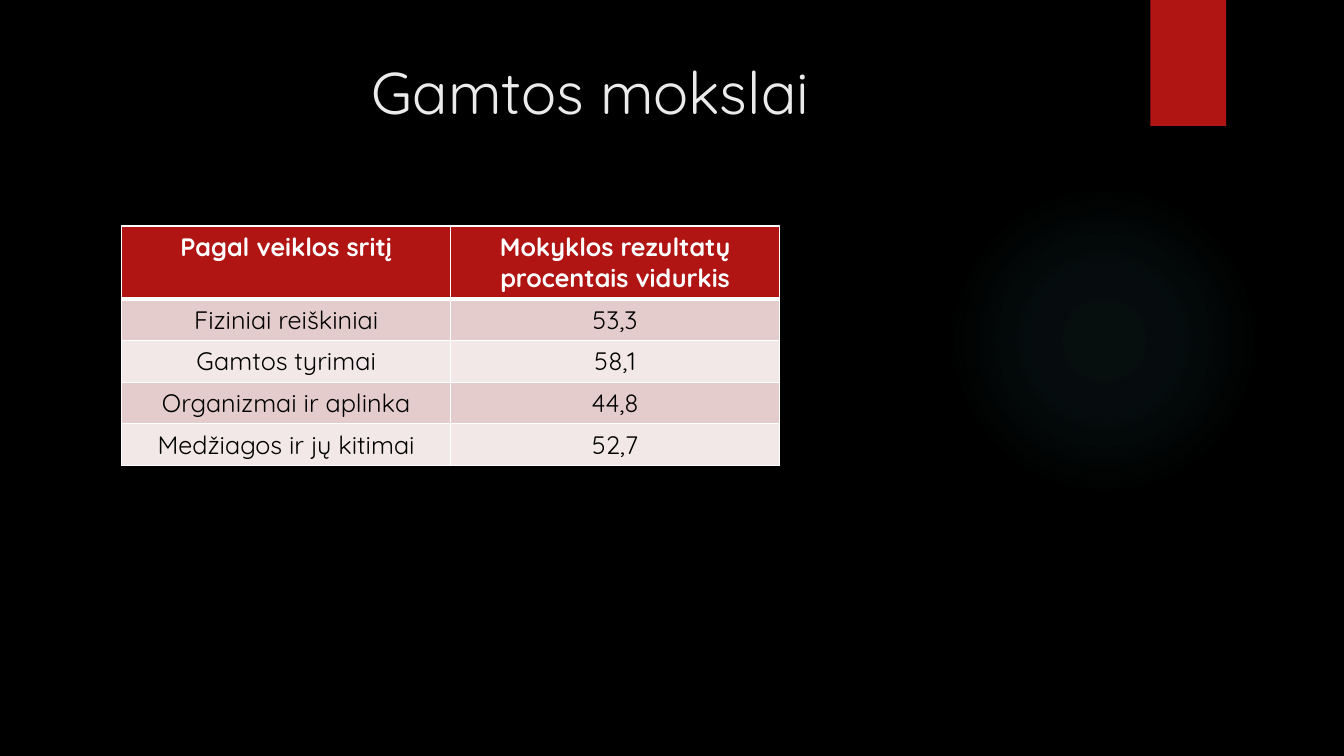
from lxml import etree
from pptx import Presentation
from pptx.dml.color import RGBColor
from pptx.enum.shapes import MSO_SHAPE
from pptx.enum.text import MSO_ANCHOR, PP_ALIGN
from pptx.oxml import parse_xml
from pptx.oxml.ns import qn
from pptx.util import Pt

CENTER = PP_ALIGN.CENTER
TOP = MSO_ANCHOR.TOP
OVAL = MSO_SHAPE.OVAL
RECTANGLE = MSO_SHAPE.RECTANGLE
FONT = "Quicksand"
RED = "B01513"
BANDS = ["E4CCCC", "F2E8E7"]
ROWS = [
    ("Pagal veiklos sritį", "Mokyklos rezultatų procentais vidurkis"),
    ("Fiziniai reiškiniai", "53,3"),
    ("Gamtos tyrimai", "58,1"),
    ("Organizmai ir aplinka", "44,8"),
    ("Medžiagos ir jų kitimai", "52,7"),
]


def rgb(color):
    return RGBColor.from_string(color)


def add_centred_run(tf, text, size, color, bold=False):
    p = tf.paragraphs[0]
    p.alignment = CENTER
    r = p.add_run()
    r.text = text
    r.font.name = FONT
    r.font.size = Pt(size)
    r.font.bold = bold
    r.font.color.rgb = rgb(color)


prs = Presentation()
prs.slide_width = Pt(960)
prs.slide_height = Pt(540)
s = prs.slides.add_slide(prs.slide_layouts[6])
s.background.fill.solid()
s.background.fill.fore_color.rgb = rgb("000000")

# Soft glow: (position %, opacity %) stops on a circular gradient
glow = s.shapes.add_shape(OVAL, Pt(677.5), Pt(131.8), Pt(221.8), Pt(221.8))
glow.shadow.inherit = False
glow.line.fill.background()
stops = "".join(
    f'<a:gs pos="{pos * 1000}"><a:srgbClr val="50B9C1">'
    f'<a:alpha val="{alpha * 1000}"/></a:srgbClr></a:gs>'
    for pos, alpha in [(0, 7), (36, 6), (69, 0)]
)
gradient = parse_xml(
    '<a:gradFill xmlns:a="http://schemas.openxmlformats.org/drawingml/2006/main">'
    f'<a:gsLst>{stops}</a:gsLst><a:path path="circle">'
    '<a:fillToRect l="50000" t="50000" r="50000" b="50000"/></a:path></a:gradFill>'
)
glow.element.spPr.find(qn("a:prstGeom")).addnext(gradient)

ribbon = s.shapes.add_shape(RECTANGLE, Pt(821.8), Pt(0), Pt(54), Pt(90))
ribbon.shadow.inherit = False
ribbon.fill.solid()
ribbon.fill.fore_color.rgb = rgb(RED)
ribbon.line.fill.background()

title = s.shapes.add_textbox(Pt(51), Pt(36), Pt(741), Pt(110))
title.text_frame.word_wrap = True
title.text_frame.vertical_anchor = TOP
add_centred_run(title.text_frame, "Gamtos mokslai", 42, "EBEBEB")

table = s.shapes.add_table(len(ROWS), 2, Pt(86.9), Pt(161.5), Pt(470), Pt(171)).table
for i, row in enumerate(ROWS):
    header = i == 0
    table.rows[i].height = Pt(52.2 if header else 29.7)
    for j, text in enumerate(row):
        cell = table.cell(i, j)
        tcPr = cell._tc.get_or_add_tcPr()
        for side in "LRTB":
            thick = (i, side) in [(0, "B"), (1, "T")]
            ln = etree.SubElement(tcPr, qn(f"a:ln{side}"), w=str(Pt(3 if thick else 1)))
            line_fill = etree.SubElement(ln, qn("a:solidFill"))
            etree.SubElement(line_fill, qn("a:srgbClr"), val="FFFFFF")
        cell.fill.solid()
        cell.fill.fore_color.rgb = rgb(RED if header else BANDS[(i - 1) % 2])
        add_centred_run(cell.text_frame, text, 18, "FFFFFF" if header else "000000", header)

prs.save("out.pptx")
